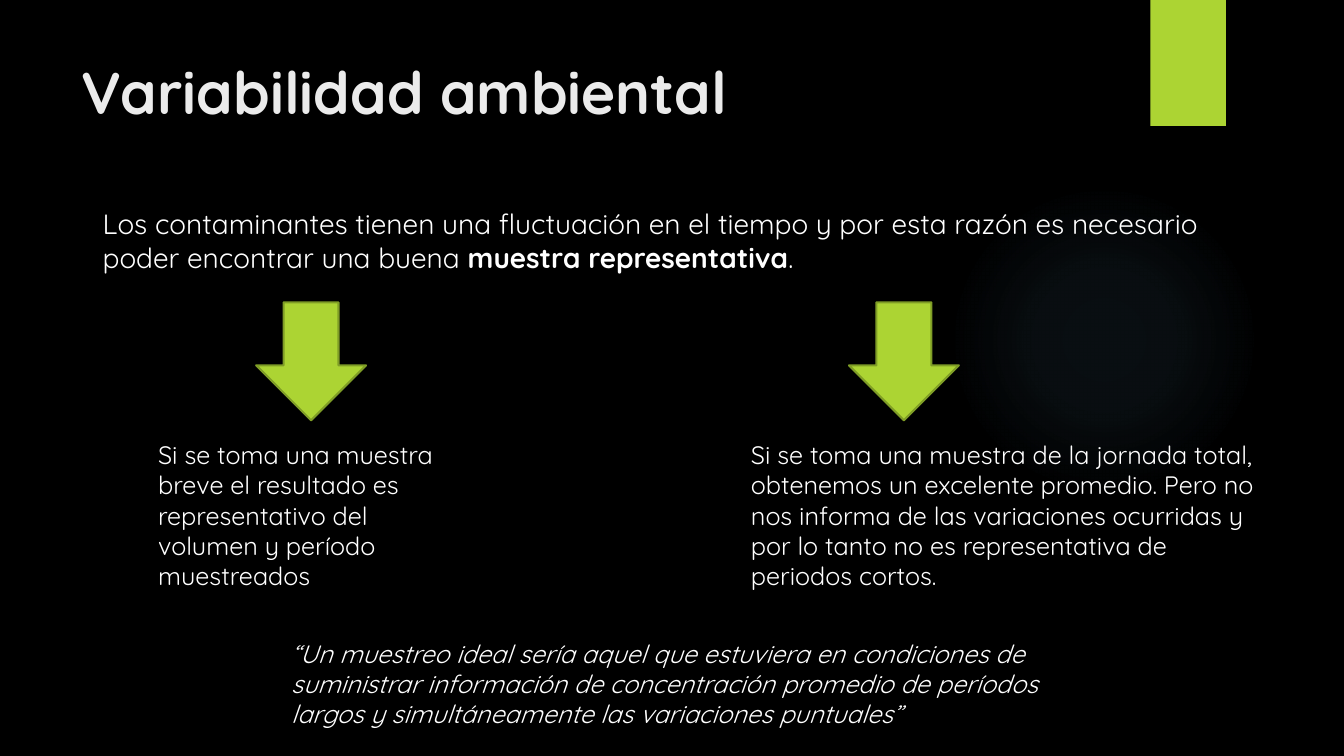
from lxml import etree
from pptx import Presentation
from pptx.dml.color import RGBColor
from pptx.enum.shapes import MSO_SHAPE
from pptx.enum.text import MSO_ANCHOR, PP_ALIGN
from pptx.oxml.ns import qn
from pptx.util import Pt

RECT, OVAL, DOWN_ARROW = MSO_SHAPE.RECTANGLE, MSO_SHAPE.OVAL, MSO_SHAPE.DOWN_ARROW
TOP, LEFT = MSO_ANCHOR.TOP, PP_ALIGN.LEFT
EMU_PER_PX = 9144  # 100 px to the inch
FONT = "Quicksand"
BLACK, WHITE, TITLE_GREY = "000000", "FFFFFF", "EBEBEB"
LIME, DARK_LIME, GLOW_BLUE = "ACD433", "7F9D26", "7AC4F0"


def px(n):
    return n * EMU_PER_PX


def color(hex_text):
    return RGBColor.from_string(hex_text)


class SlideBuilder:
    def __init__(self, prs):
        self.s = prs.slides.add_slide(prs.slide_layouts[5])
        fill = self.s.background.fill
        fill.solid()
        fill.fore_color.rgb = color(BLACK)

    def shape(self, kind, box, fill, line=None):
        sp = self.s.shapes.add_shape(kind, *map(px, box))
        sp.shadow.inherit = False
        sp.fill.solid()
        sp.fill.fore_color.rgb = color(fill)
        if line:
            sp.line.color.rgb = color(line)
            sp.line.width = Pt(1.5)
        else:
            sp.line.fill.background()
        return sp

    def glow(self, box, fill, stops):
        """Circle fading outwards; stops are (position %, opacity %)."""
        sp = self.shape(OVAL, box, fill)
        solid = sp.element.spPr.find(qn("a:solidFill"))
        grad = etree.Element(qn("a:gradFill"), rotWithShape="1")
        stop_list = etree.SubElement(grad, qn("a:gsLst"))
        for position, opacity in stops:
            stop = etree.SubElement(stop_list, qn("a:gs"), pos=str(position * 1000))
            clr = etree.SubElement(stop, qn("a:srgbClr"), val=fill)
            etree.SubElement(clr, qn("a:alpha"), val=str(opacity * 1000))
        circle = etree.SubElement(grad, qn("a:path"), {"path": "circle"})
        etree.SubElement(circle, qn("a:fillToRect"),
                         dict.fromkeys("ltrb", "50000"))
        solid.getparent().replace(solid, grad)

    def add_runs(self, sp, runs, size, rgb, italic=False):
        """Fill a text shape; runs are (text, bold) pairs."""
        tf = sp.text_frame
        tf.word_wrap = True
        tf.vertical_anchor = TOP
        p = tf.paragraphs[0]
        p.alignment = LEFT
        for text, bold in runs:
            r = p.add_run()
            r.text = text
            r.font.name = FONT
            r.font.size = Pt(size)
            r.font.color.rgb = color(rgb)
            r.font.bold = bold
            r.font.italic = italic

    def title(self, text, box):
        sp = self.s.shapes.title
        sp.left, sp.top, sp.width, sp.height = map(px, box)
        self.add_runs(sp, [(text, True)], 42, TITLE_GREY)

    def text(self, runs, box, size=18, italic=False):
        sp = self.s.shapes.add_textbox(*map(px, box))
        self.add_runs(sp, runs, size, WHITE, italic)


def main():
    prs = Presentation()
    prs.slide_width, prs.slide_height = px(1333), px(750)
    b = SlideBuilder(prs)

    b.glow((941, 183, 308, 308), GLOW_BLUE, [(0, 7), (36, 6), (69, 0)])
    b.shape(RECT, (1141, 0, 75, 125), LIME)
    b.title("Variabilidad ambiental", (71, 50, 1029, 153))
    b.text([
        ("Los contaminantes tienen una fluctuación en el tiempo y por esta razón "
         "es necesario poder encontrar una buena ", False),
        ("muestra representativa", True),
        (".", False),
    ], (92, 200, 1150, 100), size=20)

    cases = [
        (147, 313, "Si se toma una muestra breve el resultado es representativo "
                   "del volumen y período muestreados"),
        (735, 524, "Si se toma una muestra de la jornada total, obtenemos un "
                   "excelente promedio. Pero no nos informa de las variaciones "
                   "ocurridas y por lo tanto no es representativa de periodos "
                   "cortos."),
    ]
    for left, width, text in cases:
        b.shape(DOWN_ARROW, (left + 107, 300, 109, 117), LIME, DARK_LIME)
        b.text([(text, False)], (left, 431, width, 131))

    b.text([("“Un muestreo ideal sería aquel que estuviera en condiciones de "
             "suministrar información de concentración promedio de períodos "
             "largos y simultáneamente las variaciones puntuales”", False)],
           (279, 628, 776, 101), italic=True)
    prs.save("out.pptx")


if __name__ == "__main__":
    main()
